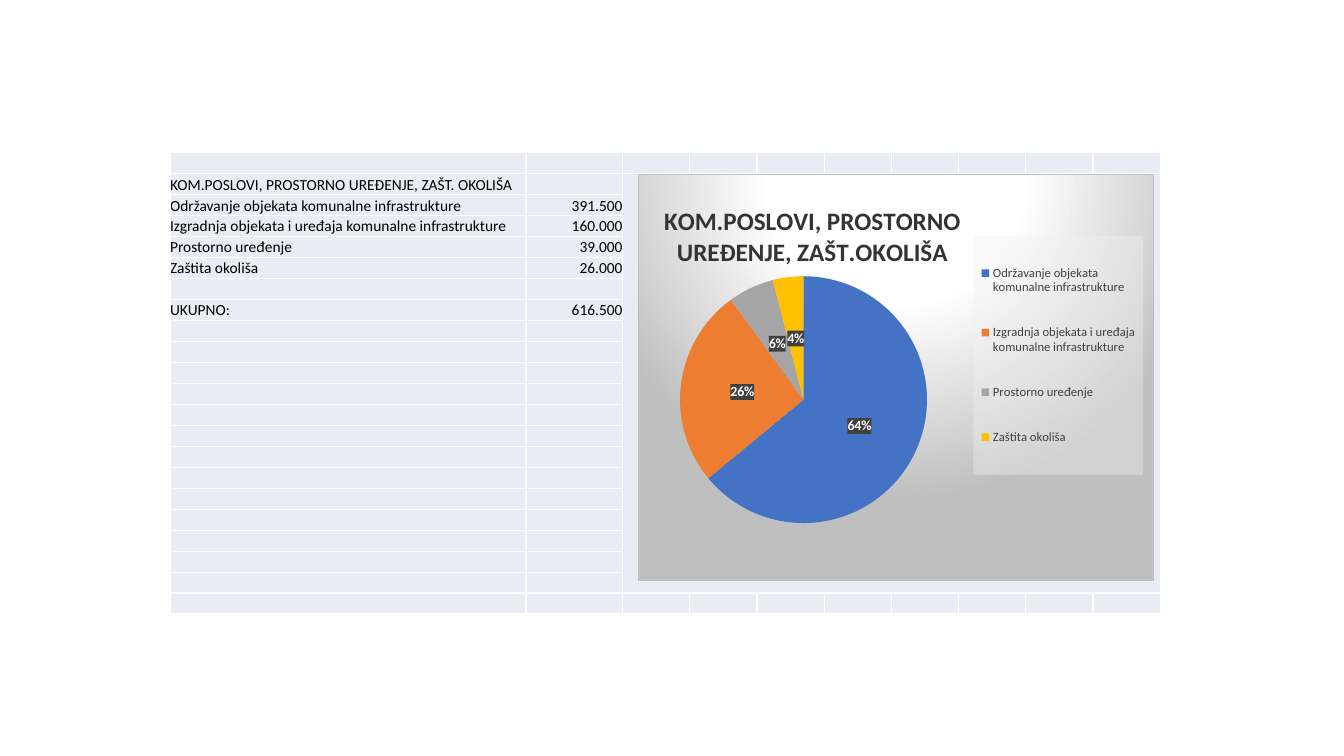
from dataclasses import dataclass

from lxml.etree import _Element
from pptx import Presentation
from pptx.chart.chart import Chart
from pptx.chart.data import CategoryChartData
from pptx.dml.color import RGBColor
from pptx.enum.chart import XL_CHART_TYPE, XL_LABEL_POSITION, XL_LEGEND_POSITION
from pptx.enum.text import MSO_ANCHOR, PP_ALIGN
from pptx.oxml import parse_xml
from pptx.oxml.ns import nsdecls, qn
from pptx.slide import Slide
from pptx.table import Table, _Cell
from pptx.text.text import Font
from pptx.util import Emu, Pt

FONT = "Calibri"
CELL_FILL = "E9EBF5"
CELL_FORMAT = {
    "margin_left": 0,
    "margin_right": 0,
    "margin_top": 0,
    "margin_bottom": 0,
    "vertical_anchor": MSO_ANCHOR.BOTTOM,
}
COLUMN_WIDTHS = [339, 92] + [64] * 8
ROW_COUNT = 22
ROW_HEIGHT = 20
CHART_TITLE = "KOM.POSLOVI, PROSTORNO UREĐENJE, ZAŠT.OKOLIŠA"


@dataclass(frozen=True)
class BudgetLine:
    row: int
    label: str
    amount: str = ""


@dataclass(frozen=True)
class Share:
    category: str
    percent: int
    color: str


@dataclass(frozen=True)
class Placement:
    x: float
    y: float
    w: float = 0
    h: float = 0


BUDGET = [
    BudgetLine(1, "KOM.POSLOVI, PROSTORNO UREĐENJE, ZAŠT. OKOLIŠA"),
    BudgetLine(2, "Održavanje objekata komunalne infrastrukture", "391.500"),
    BudgetLine(3, "Izgradnja objekata i uređaja komunalne infrastrukture", "160.000"),
    BudgetLine(4, "Prostorno uređenje", "39.000"),
    BudgetLine(5, "Zaštita okoliša", "26.000"),
    BudgetLine(7, "UKUPNO:", "616.500"),
]
SHARES = [
    Share(BUDGET[1].label, 64, "4472C4"),
    Share(BUDGET[2].label, 26, "ED7D31"),
    Share(BUDGET[3].label, 6, "A5A5A5"),
    Share(BUDGET[4].label, 4, "FFC000"),
]


def px(length: int) -> Emu:
    return Emu(length * 9525)


def rgb(color: str) -> RGBColor:
    return RGBColor.from_string(color)


def style_font(font: Font, size: int, color: str, bold: bool = False) -> None:
    for name, value in {"name": FONT, "size": Pt(size), "bold": bold}.items():
        setattr(font, name, value)
    font.color.rgb = rgb(color)


def solid_fill(color: str, alpha: int = 100) -> str:
    return (
        f'<a:solidFill><a:srgbClr val="{color}">'
        f'<a:alpha val="{alpha * 1000}"/></a:srgbClr></a:solidFill>'
    )


def chart_format(content: str) -> _Element:
    return parse_xml(f'<c:spPr {nsdecls("c", "a")}>{content}</c:spPr>')


def place(part: _Element, index: int, at: Placement, target: str = "") -> None:
    for layout in part.findall(qn("c:layout")):
        part.remove(layout)
    settings = [("xMode", "edge"), ("yMode", "edge"), ("x", at.x), ("y", at.y)]
    if target:
        settings.insert(0, ("layoutTarget", target))
    if at.w:
        settings += [("w", at.w), ("h", at.h)]
    content = "".join(f'<c:{tag} val="{value}"/>' for tag, value in settings)
    part.insert(index, parse_xml(
        f'<c:layout {nsdecls("c")}><c:manualLayout>{content}</c:manualLayout></c:layout>'
    ))


def style_cell(cell: _Cell) -> None:
    for name, value in CELL_FORMAT.items():
        setattr(cell, name, value)
    properties = cell._tc.get_or_add_tcPr()
    for side in "LRTB":
        properties.append(parse_xml(
            f'<a:ln{side} {nsdecls("a")} w="12700">{solid_fill("FFFFFF")}</a:ln{side}>'
        ))
    cell.fill.solid()
    cell.fill.fore_color.rgb = rgb(CELL_FILL)
    cell.text_frame.paragraphs[0]._p.append(
        parse_xml(f'<a:endParaRPr {nsdecls("a")} sz="1100"/>')
    )


def write_cell(cell: _Cell, text: str, align: PP_ALIGN) -> None:
    paragraph = cell.text_frame.paragraphs[0]
    paragraph.alignment = align
    run = paragraph.add_run()
    run.text = text
    style_font(run.font, 11, "000000")


def add_budget_table(slide: Slide) -> Table:
    table = slide.shapes.add_table(
        ROW_COUNT, len(COLUMN_WIDTHS), px(162), px(145),
        px(sum(COLUMN_WIDTHS)), px(ROW_COUNT * ROW_HEIGHT),
    ).table
    table.first_row = table.horz_banding = False
    for column, width in zip(table.columns, COLUMN_WIDTHS):
        column.width = px(width)
    for row in table.rows:
        row.height = px(ROW_HEIGHT)
    for cell in table.iter_cells():
        style_cell(cell)
    table.cell(1, 2).merge(table.cell(ROW_COUNT - 2, len(COLUMN_WIDTHS) - 1))
    for line in BUDGET:
        write_cell(table.cell(line.row, 0), line.label, PP_ALIGN.LEFT)
        if line.amount:
            write_cell(table.cell(line.row, 1), line.amount, PP_ALIGN.RIGHT)
    return table


def style_background(chart: Chart) -> None:
    stops = "".join(
        f'<a:gs pos="{position * 1000}"><a:srgbClr val="{color}"/></a:gs>'
        for position, color in [(0, "FFFFFF"), (39, "FFFFFF"), (100, "BFBFBF")]
    )
    chart._chartSpace.find(qn("c:chart")).addnext(chart_format(
        f'<a:gradFill><a:gsLst>{stops}</a:gsLst><a:path path="circle">'
        '<a:fillToRect l="50000" t="-80000" r="50000" b="180000"/></a:path></a:gradFill>'
        f'<a:ln w="9525">{solid_fill("BFBFBF")}</a:ln>'
    ))


def style_title(chart: Chart) -> None:
    title = chart.chart_title
    run = title.text_frame.paragraphs[0].add_run()
    run.text = CHART_TITLE
    style_font(run.font, 18, "333333", True)
    place(title._element, 1, Placement(0.04, 0.06))


def style_legend(chart: Chart) -> None:
    chart.has_legend = True
    legend = chart.legend
    legend.position = XL_LEGEND_POSITION.RIGHT
    legend.include_in_layout = False
    style_font(legend.font, 9, "404040")
    legend._element.find(qn("c:txPr")).addprevious(
        chart_format(solid_fill("F2F2F2", 39))
    )
    place(legend._element, 1, Placement(0.65, 0.15, 0.33, 0.59))


def style_slices(chart: Chart) -> None:
    plot = chart.plots[0]
    plot.vary_by_categories = True
    series = plot.series[0]
    for index, share in enumerate(SHARES):
        fill = series.points[index].format.fill
        fill.solid()
        fill.fore_color.rgb = rgb(share.color)
    labels = series.data_labels
    label_format = {
        "show_percentage": True,
        "show_value": False,
        "number_format": "0%",
        "number_format_is_linked": False,
        "position": XL_LABEL_POSITION.CENTER,
    }
    for name, value in label_format.items():
        setattr(labels, name, value)
    style_font(labels.font, 10, "FFFFFF", True)
    labels._element.find(qn("c:txPr")).addprevious(
        chart_format(solid_fill("404040", 90))
    )


def add_share_chart(slide: Slide) -> Chart:
    shares = CategoryChartData()
    shares.categories = [share.category for share in SHARES]
    shares.add_series("Series 1", [share.percent for share in SHARES])
    chart = slide.shapes.add_chart(
        XL_CHART_TYPE.PIE, px(608), px(166), px(491), px(387), shares
    ).chart
    style_font(chart.font, 10, "000000")
    style_background(chart)
    style_title(chart)
    style_legend(chart)
    style_slices(chart)
    plot_area = chart._chartSpace.find(qn("c:chart")).find(qn("c:plotArea"))
    place(plot_area, 0, Placement(0.08, 0.22, 0.48, 0.67), "inner")
    return chart


def main() -> None:
    deck = Presentation()
    deck.slide_width, deck.slide_height = px(1280), px(720)
    slide = deck.slides.add_slide(deck.slide_layouts[6])
    add_budget_table(slide)
    add_share_chart(slide)
    deck.save("out.pptx")


if __name__ == "__main__":
    main()
